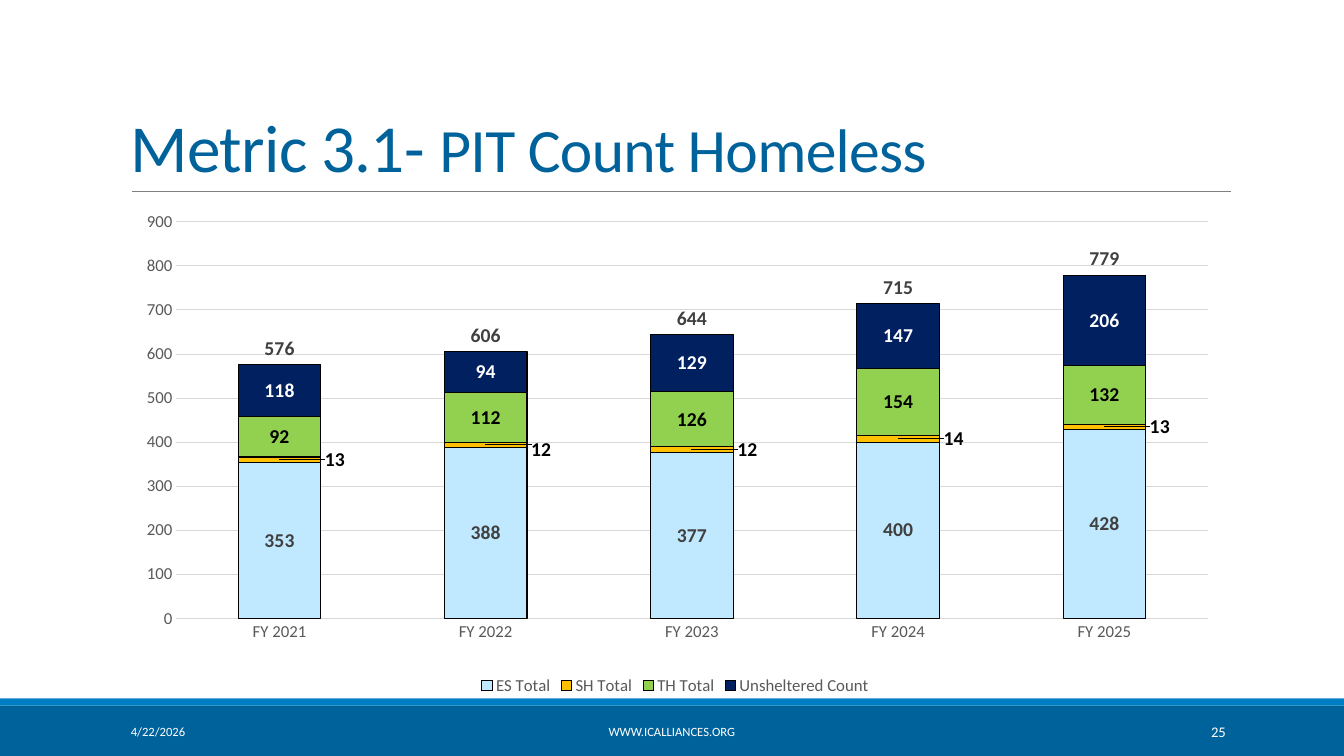
from dataclasses import dataclass

from lxml import etree
from pptx import Presentation
from pptx.chart.data import CategoryChartData
from pptx.dml.color import RGBColor
from pptx.enum.chart import XL_CHART_TYPE, XL_LEGEND_POSITION, XL_MARKER_STYLE, XL_TICK_MARK
from pptx.enum.chart import XL_LABEL_POSITION
from pptx.enum.shapes import MSO_CONNECTOR, MSO_SHAPE
from pptx.enum.text import MSO_ANCHOR, PP_ALIGN
from pptx.oxml.ns import qn
from pptx.util import Inches, Pt

STACKED = XL_CHART_TYPE.COLUMN_STACKED
BOTTOM_LEGEND = XL_LEGEND_POSITION.BOTTOM
ABOVE = XL_LABEL_POSITION.ABOVE
NO_MARKER = XL_MARKER_STYLE.NONE
NO_TICK = XL_TICK_MARK.NONE
STRAIGHT = MSO_CONNECTOR.STRAIGHT
RECTANGLE = MSO_SHAPE.RECTANGLE
MIDDLE, BOTTOM = MSO_ANCHOR.MIDDLE, MSO_ANCHOR.BOTTOM
LEFT, CENTER, RIGHT = PP_ALIGN.LEFT, PP_ALIGN.CENTER, PP_ALIGN.RIGHT

FONT = "Calibri"
COLORS = {
    "blue": "00629B", "bright": "007EC4", "rule": "808080", "white": "FFFFFF",
    "black": "000000", "axis": "595959", "grid": "D9D9D9", "label": "404040",
    "sky": "C0E9FF", "amber": "FFC000", "green": "92D050", "navy": "002060",
}

# Grid: ten columns and ten rows to the inch
UNIT = Inches(0.1)
COLUMNS, ROWS = 133.33, 75
MARGIN, CONTENT = 12, 110
FOOTER_TOP, FOOTER_HEIGHT = 70.6, 4


@dataclass(frozen=True)
class Box:
    column: float
    row: float
    columns: float
    rows: float

    def lengths(self) -> tuple[int, ...]:
        return tuple(round(n * UNIT) for n in (self.column, self.row, self.columns, self.rows))


@dataclass(frozen=True)
class Shelter:
    name: str
    values: tuple[int, ...]
    fill: str
    label: str


@dataclass(frozen=True)
class FooterItem:
    text: str
    column: float
    columns: float
    size: float
    align: PP_ALIGN


BANDS = [(Box(0, 70, COLUMNS, 5), "blue"), (Box(0, 69.3, COLUMNS, 0.7), "bright")]
YEARS = [f"FY {year}" for year in range(2021, 2026)]
SHELTERS = [
    Shelter("ES Total", (353, 388, 377, 400, 428), "sky", "label"),
    Shelter("SH Total", (13, 12, 12, 14, 13), "amber", "black"),
    Shelter("TH Total", (92, 112, 126, 154, 132), "green", "black"),
    Shelter("Unsheltered Count", (118, 94, 129, 147, 206), "navy", "white"),
]
TOTALS = [sum(counts) for counts in zip(*(shelter.values for shelter in SHELTERS))]
SAFE_HAVEN = 1
SAFE_HAVEN_OFFSETS = [(0.05, 0), (0.05, 0.01), (0.05, 0), (0.05, 0), (0.05, 0)]
FOOTER = [
    FooterItem("4/22/2026", MARGIN, 27, 9, LEFT),
    FooterItem("WWW.ICALLIANCES.ORG", 40.3, 52.7, 9, CENTER),
    FooterItem("25", 108.3, 14.3, 10.5, RIGHT),
]


def color(name: str) -> RGBColor:
    return RGBColor.from_string(COLORS[name])


def format_font(font, size: float, name: str, bold: bool = False) -> None:
    font.name, font.size, font.bold = FONT, Pt(size), bold
    font.color.rgb = color(name)


def add_text(slide, box: Box, runs: list[tuple[str, float]], *, fill: str,
             align: PP_ALIGN = LEFT, anchor: MSO_ANCHOR = MIDDLE,
             line_spacing: float = 1.0, tracking: int = 0) -> None:
    frame = slide.shapes.add_textbox(*box.lengths()).text_frame
    frame.word_wrap, frame.vertical_anchor = True, anchor
    paragraph = frame.paragraphs[0]
    paragraph.alignment, paragraph.line_spacing = align, line_spacing
    for text, size in runs:
        run = paragraph.add_run()
        run.text = text
        format_font(run.font, size, fill)
        if tracking:
            run.font._element.set("spc", str(tracking))


def add_band(slide, box: Box, fill: str) -> None:
    shape = slide.shapes.add_shape(RECTANGLE, *box.lengths())
    shape.shadow.inherit = False
    shape.fill.solid()
    shape.fill.fore_color.rgb = color(fill)
    shape.line.fill.background()


def add_rule(slide, start: float, end: float, row: float) -> None:
    ends = [round(n * UNIT) for n in (start, row, end, row)]
    connector = slide.shapes.add_connector(STRAIGHT, *ends)
    connector.line.color.rgb = color("rule")
    connector.line.width = Pt(0.5)
    etree.SubElement(connector.element.spPr, qn("a:effectLst"))


def chart_element(tag: str, value: object = None) -> etree._Element:
    element = etree.Element(qn(f"c:{tag}"))
    if value is not None:
        element.set("val", str(value))
    return element


def manual_layout(**settings: object) -> etree._Element:
    layout = chart_element("layout")
    manual = chart_element("manualLayout")
    layout.append(manual)
    for tag, value in settings.items():
        manual.append(chart_element(tag, value))
    return layout


def move_totals_to_line(chart) -> None:
    bars = chart.element.xpath(".//c:barChart")[0]
    totals = bars.xpath("./c:ser")[-1]
    for flag in totals.xpath("./c:invertIfNegative"):
        totals.remove(flag)
    line = chart_element("lineChart")
    line.append(chart_element("grouping", "standard"))
    line.append(chart_element("varyColors", 0))
    line.append(totals)
    line.append(chart_element("marker", 1))
    for axis in bars.xpath("./c:axId"):
        line.append(chart_element("axId", axis.get("val")))
    bars.addnext(line)


def show_values(series, fill: str) -> None:
    labels = series.data_labels
    labels.show_value = True
    format_font(labels.font, 14, fill, bold=True)


def format_axes(chart) -> None:
    for axis in (chart.category_axis, chart.value_axis):
        axis.major_tick_mark = axis.minor_tick_mark = NO_TICK
        format_font(axis.tick_labels.font, 12, "axis")
    values = chart.value_axis
    values.minimum_scale, values.maximum_scale, values.major_unit = 0, 900, 100
    values.format.line.fill.background()
    for line in (chart.category_axis.format.line, values.major_gridlines.format.line):
        line.color.rgb = color("grid")
        line.width = Pt(0.75)


def format_legend(chart) -> None:
    chart.has_legend = True
    legend = chart.legend
    legend.position, legend.include_in_layout = BOTTOM_LEGEND, False
    format_font(legend.font, 12, "axis")
    entry = chart_element("legendEntry")
    entry.append(chart_element("idx", len(SHELTERS)))
    entry.append(chart_element("delete", 1))
    chart.element.xpath(".//c:legendPos")[0].addnext(entry)


def add_count_chart(slide, box: Box) -> None:
    data = CategoryChartData()
    data.categories = YEARS
    for shelter in SHELTERS:
        data.add_series(shelter.name, shelter.values)
    data.add_series("Series 5", TOTALS)
    chart = slide.shapes.add_chart(STACKED, *box.lengths(), data).chart
    chart.has_title = False
    format_font(chart.font, 10, "black")
    move_totals_to_line(chart)
    bars, line = chart.plots
    bars.gap_width, bars.overlap, bars.vary_by_categories = 150, 100, False

    # Stacked counts
    for series, shelter in zip(bars.series, SHELTERS):
        series.invert_if_negative = False
        series.format.fill.solid()
        series.format.fill.fore_color.rgb = color(shelter.fill)
        series.format.line.color.rgb = color("black")
        series.format.line.width = Pt(0.75)
        show_values(series, shelter.label)

    # Narrow segments carry their labels beside the column
    safe_haven = bars.series[SAFE_HAVEN]
    for index in range(len(YEARS)):
        format_font(safe_haven.points[index].data_label.font, 14, "black", bold=True)
    label_ids = chart.element.xpath(".//c:dLbl/c:idx")
    for label_id, (x, y) in zip(label_ids, SAFE_HAVEN_OFFSETS):
        label_id.addnext(manual_layout(x=x, y=y))

    # Totals above the columns
    totals = line.series[0]
    totals.smooth = False
    totals.format.line.fill.background()
    totals.marker.style = NO_MARKER
    show_values(totals, "label")
    totals.data_labels.position = ABOVE

    format_axes(chart)
    format_legend(chart)
    plot_area = chart.element.xpath(".//c:plotArea")[0]
    for layout in plot_area.xpath("./c:layout"):
        plot_area.remove(layout)
    plot_area.insert(0, manual_layout(layoutTarget="inner", xMode="edge", yMode="edge",
                                      x=0.05, y=0.06, w=0.93, h=0.78))


def main() -> None:
    presentation = Presentation()
    presentation.slide_width = round(COLUMNS * UNIT)
    presentation.slide_height = ROWS * UNIT
    slide = presentation.slides.add_slide(presentation.slide_layouts[6])

    # Footer bands and title rule
    for box, fill in BANDS:
        add_band(slide, box, fill)
    add_rule(slide, 13.1, 122.1, 19)

    # Title and chart
    add_text(slide, Box(MARGIN, 3.1, CONTENT, 15.9),
             [("Metric 3.1- ", 48), ("PIT Count Homeless", 44)],
             fill="blue", anchor=BOTTOM, line_spacing=0.85, tracking=-50)
    add_count_chart(slide, Box(MARGIN, 19, CONTENT, 50.4))

    # Footer text
    for item in FOOTER:
        add_text(slide, Box(item.column, FOOTER_TOP, item.columns, FOOTER_HEIGHT),
                 [(item.text, item.size)], fill="white", align=item.align)
    presentation.save("out.pptx")


if __name__ == "__main__":
    main()
